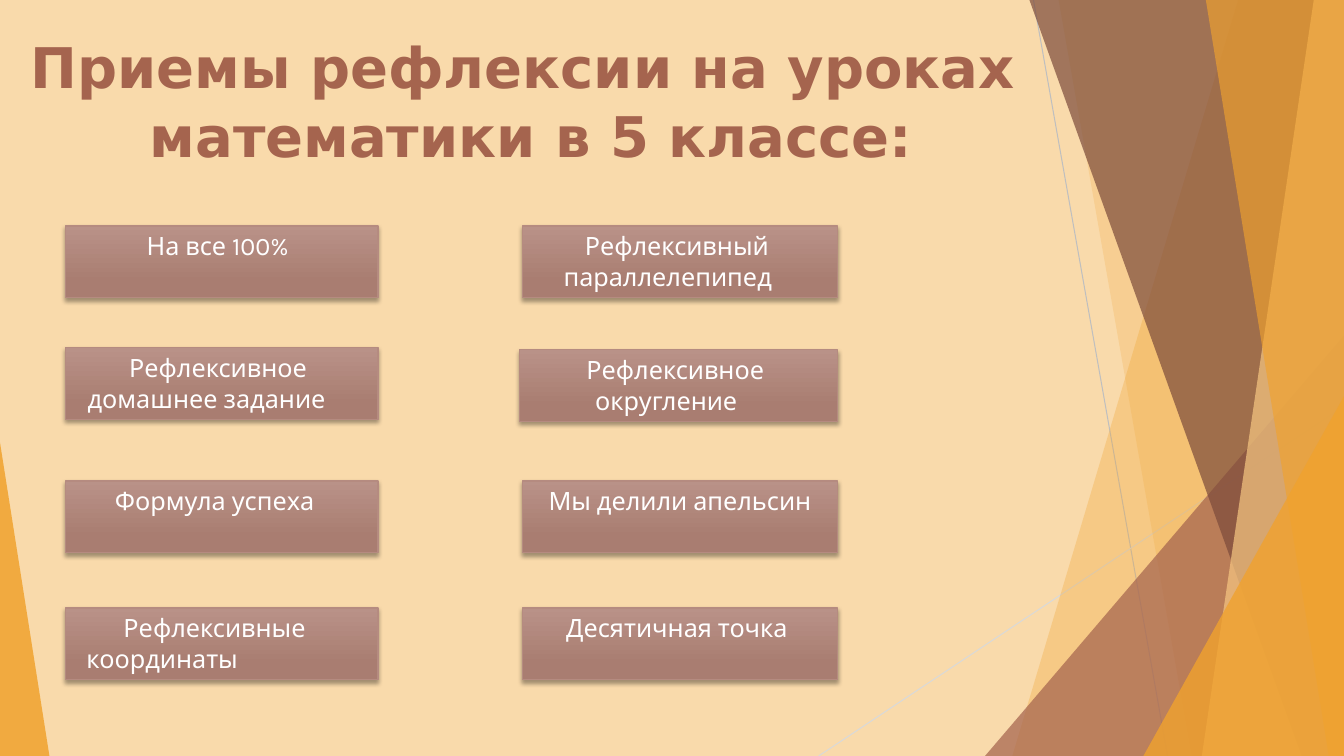
from lxml.etree import SubElement as Sub
from pptx import Presentation
from pptx.dml.color import RGBColor
from pptx.enum.shapes import MSO_CONNECTOR as Link, MSO_SHAPE as Kind
from pptx.enum.text import MSO_ANCHOR as Anchor, PP_ALIGN as Align
from pptx.oxml.ns import qn
from pptx.util import Pt

UNIT = 9144
GOLD, CLAY, WHITE = "F0A22E", "A5644E", "FFFFFF"
WIDE, TALL = 1333, 750

PANES = [
    (GOLD, 30, [(1228, 0), (WIDE, 0), (WIDE, TALL), (1004, TALL)]),
    (GOLD, 20, [(1050, 0), (WIDE, 0), (WIDE, TALL), (1182, TALL)]),
    (CLAY, 72, (977, 333, 356, 417, 1)),
    ("7C4B3B", 70, [(1021, 0), (WIDE, 0), (WIDE, TALL), (1291, TALL)]),
    ("F6C782", 70, [(1303, 0), (WIDE, 0), (WIDE, TALL), (1192, TALL)]),
    (GOLD, 65, [(1196, 0), (WIDE, 0), (WIDE, TALL), (1318, TALL)]),
    (GOLD, 80, (1134, 393, 199, 357, 1)),
    (GOLD, 85, (0, 439, 49, 311, 0)),
]

CARDS = [
    (65, 224, 310, 8, [("На все 100%", 0)]),
    (65, 345, 310, 30, [("Рефлексивное", 23), ("домашнее задание", 0)]),
    (65, 477, 310, 14, [("Формула успеха", 0)]),
    (65, 603, 310, 14, [("Рефлексивные", 0), ("координаты", 11, Align.LEFT)]),
    (518, 224, 313, 24, [("Рефлексивный", 18), ("параллелепипед", 0)]),
    (515, 347, 316, 24, [("Рефлексивное", 18), ("округление", 0)]),
    (518, 477, 313, 0, [("Мы делили апельсин", 0)]),
    (518, 603, 313, 6, [("Десятичная точка", 0)]),
]


def px(n):
    return n * UNIT


def rgb(code):
    return RGBColor.from_string(code)


def write(par, text, font, size, color, bold=False, align=Align.CENTER,
          indent=0, pitch=None):
    run = par.add_run()
    run.text = text
    run.font.name = font
    run.font.size = Pt(size)
    run.font.bold = bold
    run.font.color.rgb = rgb(color)
    par.alignment = align
    par.line_spacing = pitch
    par.space_before = Pt(0)
    par._p.get_or_add_pPr().set("marL", str(px(indent)))


def fill(frame, lines, **look):
    for i, (text, indent, *side) in enumerate(lines):
        par = frame.add_paragraph() if i else frame.paragraphs[0]
        align = side[0] if side else Align.CENTER
        write(par, text, indent=indent, align=align, **look)


def tint(shape, color, alpha):
    shape.shadow.inherit = False
    shape.line.fill.background()
    shape.fill.solid()
    shape.fill.fore_color.rgb = rgb(color)
    node = shape._element.spPr.find(".//" + qn("a:srgbClr"))
    Sub(node, qn("a:alpha"), val=str(alpha * 1000))


def pane(slide, color, alpha, form):
    if isinstance(form, list):
        pen = slide.shapes.build_freeform(*form[0], scale=UNIT)
        pen.add_line_segments(form[1:], close=True)
        shape = pen.convert_to_shape()
    else:
        *box, peak = form
        shape = slide.shapes.add_shape(Kind.ISOSCELES_TRIANGLE, *map(px, box))
        shape.adjustments[0] = peak
    tint(shape, color, alpha)


def line(slide, ends, color):
    rule = slide.shapes.add_connector(Link.STRAIGHT, *map(px, ends))
    rule.line.color.rgb = rgb(color)
    rule.line.width = Pt(0.75)
    Sub(rule._element.spPr, qn("a:effectLst"))


def shade(shape):
    shape.shadow.inherit = False
    list_node = shape._element.spPr.find(qn("a:effectLst"))
    cast = Sub(list_node, qn("a:outerShdw"), blurRad=str(Pt(3)),
               dist=str(Pt(2)), dir="5400000", rotWithShape="0")
    color = Sub(cast, qn("a:srgbClr"), val="000000")
    Sub(color, qn("a:alpha"), val="35000")


def card(slide, x, y, w, slack, lines):
    shape = slide.shapes.add_shape(Kind.RECTANGLE, px(x), px(y), px(w), px(71))
    shape.fill.gradient()
    shape.fill.gradient_angle = 270
    tones = [(0, "B99288"), (0.78, "A97D71")]
    for stop, (place, color) in zip(shape.fill.gradient_stops, tones):
        stop.position = place
        stop.color.rgb = rgb(color)
    shape.line.color.rgb = rgb("B58B80")
    shape.line.width = Pt(1)
    shade(shape)
    frame = shape.text_frame
    frame.word_wrap = True
    frame.vertical_anchor = Anchor.TOP
    frame.margin_right = px(10 + slack)
    fill(frame, lines, font="Karla", size=18, color=WHITE)


def head(slide):
    title = slide.shapes.title
    title.left, title.top, title.width, title.height = map(
        px, (16, 26, 1005, 145))
    frame = title.text_frame
    frame.word_wrap = True
    frame.vertical_anchor = Anchor.TOP
    frame.margin_left = frame.margin_right = 0
    lines = [("Приемы рефлексии на уроках", 0), ("математики в 5 классе:", 16)]
    fill(frame, lines, font="DejaVu Sans", size=40, color=CLAY, bold=True,
         pitch=Pt(49))


def main():
    deck = Presentation()
    deck.slide_width, deck.slide_height = px(WIDE), px(TALL)
    slide = deck.slides.add_slide(deck.slide_layouts[5])
    slide.background.fill.solid()
    slide.background.fill.fore_color.rgb = rgb("F9DAAB")
    line(slide, (1025, 0, 1158, TALL), "BFBFBF")
    line(slide, (WIDE, 403, 812, TALL), "D9D9D9")
    for item in PANES:
        pane(slide, *item)
    head(slide)
    for item in CARDS:
        card(slide, *item)
    deck.save("out.pptx")


if __name__ == "__main__":
    main()
